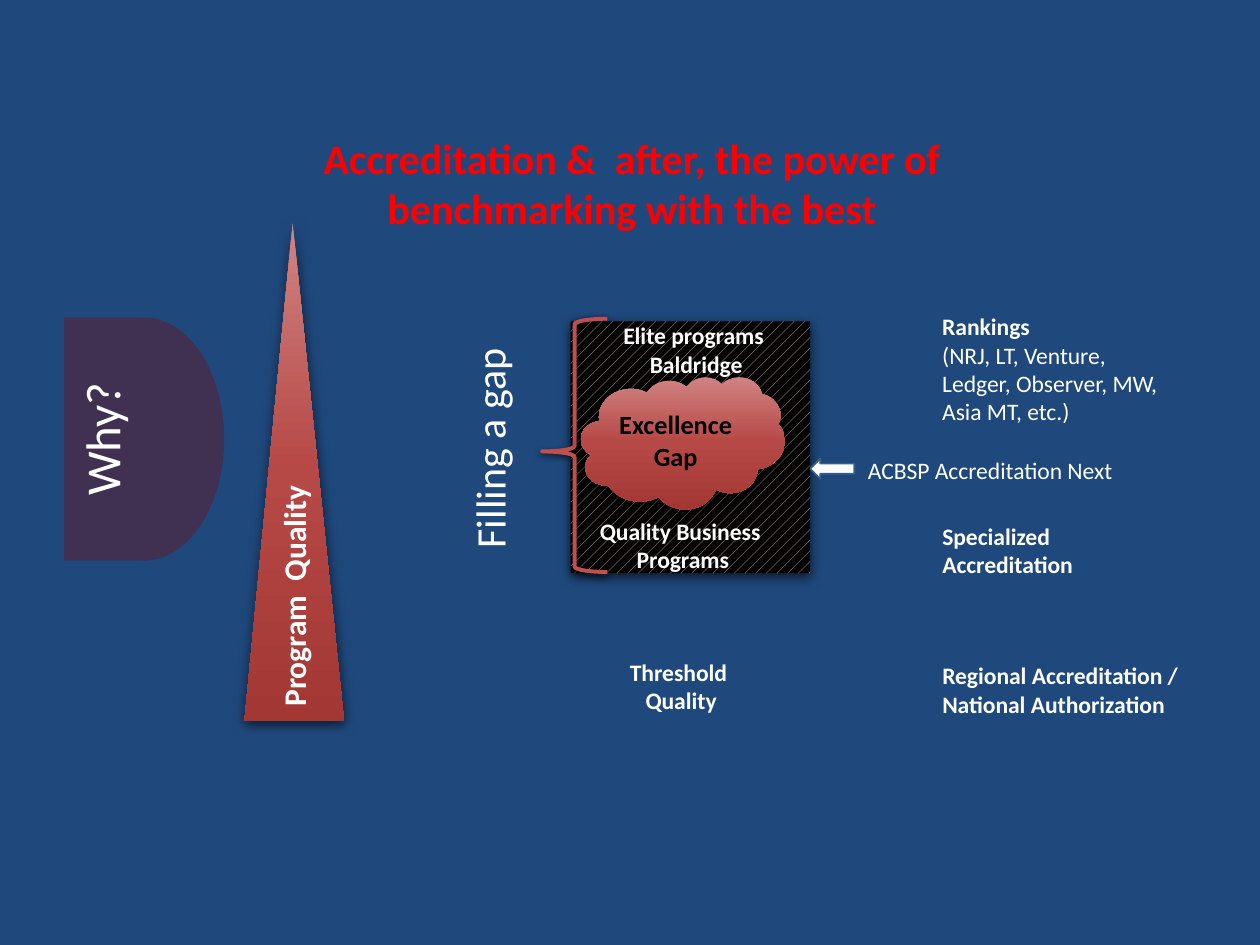
from copy import deepcopy

from lxml import etree
from pptx import Presentation
from pptx.dml.color import RGBColor
from pptx.enum.dml import MSO_PATTERN
from pptx.enum.shapes import MSO_SHAPE as SHAPE
from pptx.enum.text import MSO_ANCHOR as ANCHOR, MSO_AUTO_SIZE as AUTO, PP_ALIGN as ALIGN
from pptx.oxml.ns import qn
from pptx.util import Inches, Pt

BODY = {"size": Pt(13.5), "bold": True}
PLAIN = {"size": Pt(13.5), "bold": False}
RED_STOPS = [(0, "D08382"), (0.5, "B64845"), (1, "A33734")]
DEEP = {"alpha": 63, "blur": 7, "dist": 2.2}
SOFT = {"alpha": 68, "blur": 4, "dist": 1.2}


def rgb(value):
    return RGBColor.from_string(value)


class Deck:
    """Holds the shared style and the current slide."""

    font = "Calibri"
    white = "FFFFFF"

    def __init__(self, background):
        self.prs = Presentation()
        self.prs.slide_width, self.prs.slide_height = Inches(10), Inches(7.5)
        self.s = self.prs.slides.add_slide(self.prs.slide_layouts[6])
        fill = self.s.background.fill
        fill.solid()
        fill.fore_color.rgb = rgb(background)

    def set_lines(self, sp, lines, fmt, color=white, align=ALIGN.LEFT):
        tf = sp.text_frame
        for i, line in enumerate(lines):
            p = tf.paragraphs[0] if i == 0 else tf.add_paragraph()
            p.alignment = align
            runs = [(line, fmt)] if isinstance(line, str) else line
            for j, (text, values) in enumerate(runs):
                if j:
                    p.add_line_break()
                r = p.add_run()
                r.text = text
                for name, value in {"name": self.font, **values}.items():
                    setattr(r.font, name, value)
                r.font.color.rgb = rgb(color)

    def text(self, box, lines, fmt=BODY, wrap=True, rotation=0, grow=True, **style):
        sp = self.s.shapes.add_textbox(*map(Inches, box))
        sp.rotation = rotation
        sp.text_frame.word_wrap = wrap
        sp.text_frame.auto_size = AUTO.SHAPE_TO_FIT_TEXT if grow else AUTO.NONE
        self.set_lines(sp, lines, fmt, **style)

    def shape(self, kind, box, fill=None, line=None, adjust=(), shadow=None):
        sp = self.s.shapes.add_shape(kind, *map(Inches, box))
        for i, value in enumerate(adjust):
            sp.adjustments[i] = value
        if isinstance(fill, list):
            self.gradient(sp, fill)
        elif fill:
            sp.fill.solid()
            sp.fill.fore_color.rgb = rgb(fill)
        else:
            sp.fill.background()
        if line:
            sp.line.color.rgb, sp.line.width = rgb(line[0]), Pt(line[1])
        else:
            sp.line.fill.background()
        sp.shadow.inherit = False
        if shadow:
            self.shadow(sp, **shadow)
        return sp

    def gradient(self, sp, stops):
        sp.fill.gradient()
        sp.fill.gradient_angle = 270
        gs = sp._element.spPr.find(".//" + qn("a:gs"))
        gs.addnext(deepcopy(gs))
        for stop, (position, color) in zip(sp.fill.gradient_stops, stops):
            stop.position, stop.color.rgb = position, rgb(color)

    def pattern(self, sp, kind, fore, back):
        sp.fill.patterned()
        sp.fill.pattern = kind
        sp.fill.fore_color.rgb, sp.fill.back_color.rgb = rgb(fore), rgb(back)

    def shadow(self, sp, alpha, blur, dist):
        effects = sp._element.spPr.find(qn("a:effectLst"))
        outer = etree.SubElement(effects, qn("a:outerShdw"), blurRad=str(Pt(blur)),
                                 dist=str(Pt(dist)), dir="5400000", rotWithShape="0")
        color = etree.SubElement(outer, qn("a:srgbClr"), val="000000")
        etree.SubElement(color, qn("a:alpha"), val=str(alpha * 1000))

    def label(self, sp, lines, fmt, color=white, vertical=False, inset=0.1):
        tf = sp.text_frame
        tf.word_wrap, tf.vertical_anchor = True, ANCHOR.MIDDLE
        tf.margin_left = tf.margin_right = Inches(inset)
        if vertical:
            tf._txBody.bodyPr.set("vert", "vert270")
        self.set_lines(sp, lines, fmt, color, ALIGN.CENTER)


def main():
    d = Deck("1F497D")

    panel = d.shape(SHAPE.RECTANGLE, (4.53, 2.55, 1.9, 2), shadow=DEEP)
    d.pattern(panel, MSO_PATTERN.PERCENT_20, "F7C5A3", "000000")
    d.shape(SHAPE.LEFT_BRACE, (4.3, 2.53, 0.52, 2.01), line=("C0504D", 2.25),
            adjust=(0.083, 0.524), shadow=SOFT)
    d.text((2.95, 3.27, 1.86, 0.5), ["Filling a gap"], {"size": Pt(24)}, wrap=False, rotation=270)
    cloud = d.shape(SHAPE.CLOUD, (4.61, 2.99, 1.62, 1.05), RED_STOPS, shadow=DEEP)
    d.label(cloud, ["Excellence", "Gap"], {"size": Pt(15), "bold": True}, "000000", inset=0)
    spire = d.shape(SHAPE.ISOSCELES_TRIANGLE, (1.94, 1.77, 0.79, 3.95), RED_STOPS,
                    adjust=(0.484,), shadow=DEEP)
    d.label(spire, ["Program  Quality"], {"size": Pt(18), "bold": True}, vertical=True)

    rankings = [("Rankings ", BODY),
                ("(NRJ, LT, Venture, Ledger, Observer, MW, Asia MT, etc.)", PLAIN)]
    d.text((7.38, 2.43, 2.07, 0.87), [rankings], grow=False)
    for top, width, lines in [
        (5.2, 2.19, ["Regional Accreditation /", "National Authorization"]),
        (4.09, 1.31, ["Specialized", "Accreditation"]),
    ]:
        d.text((7.38, top, width, 0.56), lines, wrap=False)

    for left, top, width, lines in [
        (4.53, 5.17, 1.71, ["Threshold", " Quality"]),
        (4.25, 4.05, 2.34, ["Quality Business ", "Programs"]),
        (4.43, 2.5, 2.19, ["Elite programs ", "Baldridge"]),
    ]:
        d.text((left, top, width, 0.56), lines, align=ALIGN.CENTER)

    d.shape(SHAPE.OVAL, (0.51, 2.52, 1.27, 1.93), "403152")
    why = d.shape(SHAPE.RECTANGLE, (0.51, 2.52, 0.58, 1.93), "403152")
    d.label(why, ["Why?"], {"size": Pt(28)}, vertical=True, inset=0)

    d.text((1.69, 1, 6.65, 0.91),
           ["Accreditation &  after, the power of benchmarking with the best"],
           {"size": Pt(24), "bold": True}, color="FF0000", align=ALIGN.CENTER)
    d.text((6.79, 3.57, 2.44, 0.33), ["ACBSP Accreditation Next"], PLAIN)
    d.shape(SHAPE.LEFT_ARROW, (6.43, 3.64, 0.35, 0.16), "FFFFFF", ("3A5F8C", 1))

    d.prs.save("out.pptx")


if __name__ == "__main__":
    main()
